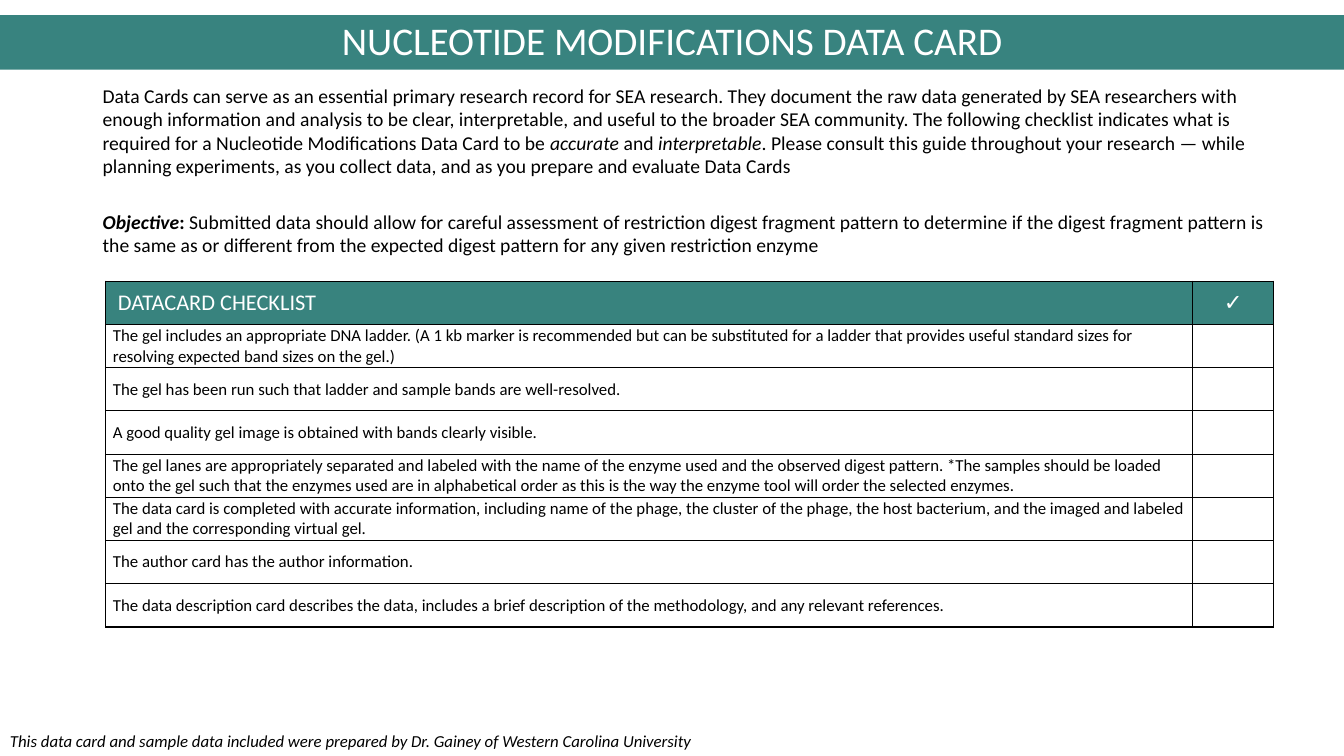
from lxml.etree import SubElement
from pptx import Presentation
from pptx.dml.color import RGBColor
from pptx.enum.text import MSO_ANCHOR as Anchor, MSO_AUTO_SIZE as AutoSize, PP_ALIGN as Align
from pptx.oxml.ns import qn
from pptx.util import Inches, Pt

BLACK, WHITE, BAND_TEAL, HEADER_TEAL = "000000", "FFFFFF", "38837F", "38837E"

INTRO = [
    ("Data Cards can serve as an essential primary research record for SEA research. "
     "They document the raw data generated by SEA researchers with enough information "
     "and analysis to be clear, interpretable, and useful to the broader SEA community. "
     "The following checklist indicates what is required for a Nucleotide Modifications "
     "Data Card to be ", ""),
    ("accurate", "i"),
    (" and ", ""),
    ("interpretable", "i"),
    (". Please consult this guide throughout your research — while planning experiments, "
     "as you collect data, and as you prepare and evaluate Data Cards", ""),
]
OBJECTIVE = [
    ("Objective", "bi"),
    (":", "b"),
    (" Submitted data should allow for careful assessment of restriction digest fragment "
     "pattern to determine if the digest fragment pattern is the same as or different from "
     "the expected digest pattern for any given restriction enzyme", ""),
]
CREDIT = [("This data card and sample data included were prepared by Dr. Gainey of "
           "Western Carolina University", "i")]
CHECKLIST = [
    "The gel includes an appropriate DNA ladder. (A 1 kb marker is recommended but can be "
    "substituted for a ladder that provides useful standard sizes for resolving expected "
    "band sizes on the gel.)",
    "The gel has been run such that ladder and sample bands are well-resolved.",
    "A good quality gel image is obtained with bands clearly visible.",
    "The gel lanes are appropriately separated and labeled with the name of the enzyme used "
    "and the observed digest pattern. *The samples should be loaded onto the gel such that "
    "the enzymes used are in alphabetical order as this is the way the enzyme tool will "
    "order the selected enzymes.",
    "The data card is completed with accurate information, including name of the phage, the "
    "cluster of the phage, the host bacterium, and the imaged and labeled gel and the "
    "corresponding virtual gel.",
    "The author card has the author information.",
    "The data description card describes the data, includes a brief description of the "
    "methodology, and any relevant references.",
]


def rgb(hex_code):
    """Turn a hex string into a colour."""
    return RGBColor.from_string(hex_code)


def style(font, size, color):
    """Set the typeface, size and colour of a font."""
    font.name, font.size = "Calibri", Pt(size)
    font.color.rgb = rgb(color)


def add_title_band(slide, left, top, width, height):
    """Turn the title placeholder into a full-width coloured band."""
    title = slide.shapes.title
    title.left, title.top, title.width, title.height = map(Inches, (left, top, width, height))
    title.fill.solid()
    title.fill.fore_color.rgb = rgb(BAND_TEAL)
    title.text_frame.text = "NUCLEOTIDE MODIFICATIONS DATA CARD"
    title.text_frame.vertical_anchor = Anchor.MIDDLE
    heading = title.text_frame.paragraphs[0]
    heading.alignment, heading.line_spacing = Align.CENTER, 0.9
    style(heading.runs[0].font, 28, WHITE)


def add_paragraph_box(slide, left, top, width, height, passages, size):
    """Add a text box whose passages are marked b for bold and i for italic."""
    frame = slide.shapes.add_textbox(*map(Inches, (left, top, width, height))).text_frame
    frame.word_wrap, frame.auto_size = True, AutoSize.SHAPE_TO_FIT_TEXT
    for words, marks in passages:
        run = frame.paragraphs[0].add_run()
        run.text = words
        style(run.font, size, BLACK)
        run.font.bold, run.font.italic = "b" in marks, "i" in marks


def add_borders(cell):
    """Draw a thin black line on each side of a cell."""
    properties = cell._tc.get_or_add_tcPr()
    for side in ("a:lnL", "a:lnR", "a:lnT", "a:lnB"):
        line = SubElement(properties, qn(side), w=str(Pt(1)))
        SubElement(SubElement(line, qn("a:solidFill")), qn("a:srgbClr"), val=BLACK)


def fill_cell(cell, words, size, color, background):
    """Write and format one checklist cell."""
    add_borders(cell)
    cell.fill.solid()
    cell.fill.fore_color.rgb = rgb(background)
    cell.vertical_anchor = Anchor.MIDDLE
    cell.margin_left = cell.margin_right = Inches(0.07)
    cell.margin_top = cell.margin_bottom = 0
    cell.text_frame.text = words
    style(cell.text_frame.paragraphs[0].font, size, color)
    for run in cell.text_frame.paragraphs[0].runs:
        style(run.font, size, color)


def add_checklist(slide, left, top, width, height):
    """Add the checklist table with a narrow column for ticks."""
    rows = [("DATACARD CHECKLIST", "✓")] + [(item, "") for item in CHECKLIST]
    box = map(Inches, (left, top, width, height))
    table = slide.shapes.add_table(len(rows), 2, *box).table
    tick_width = 0.8
    table.columns[0].width = Inches(width - tick_width)
    table.columns[1].width = Inches(tick_width)
    for r, row in enumerate(rows):
        look = (12, BLACK, WHITE) if r else (16, WHITE, HEADER_TEAL)
        for c, words in enumerate(row):
            fill_cell(table.cell(r, c), words, *look)
    table.cell(0, 0).margin_left = Inches(0.12)
    table.cell(0, 1).text_frame.paragraphs[0].alignment = Align.CENTER


def main():
    """Build the data card slide and save it."""
    deck = Presentation()
    deck.slide_width, deck.slide_height = Inches(13.33), Inches(7.5)
    slide = deck.slides.add_slide(deck.slide_layouts[5])
    add_title_band(slide, 0, 0.15, 13.33, 0.54)
    add_paragraph_box(slide, 0.92, 0.78, 11.97, 1.51, INTRO, 14)
    add_paragraph_box(slide, 0.92, 2.03, 11.97, 0.81, OBJECTIVE, 14)
    add_checklist(slide, 1.05, 2.79, 11.58, 3.43)
    add_paragraph_box(slide, 0, 7.2, 7.05, 0.3, CREDIT, 12)
    deck.save("out.pptx")


if __name__ == "__main__":
    main()
